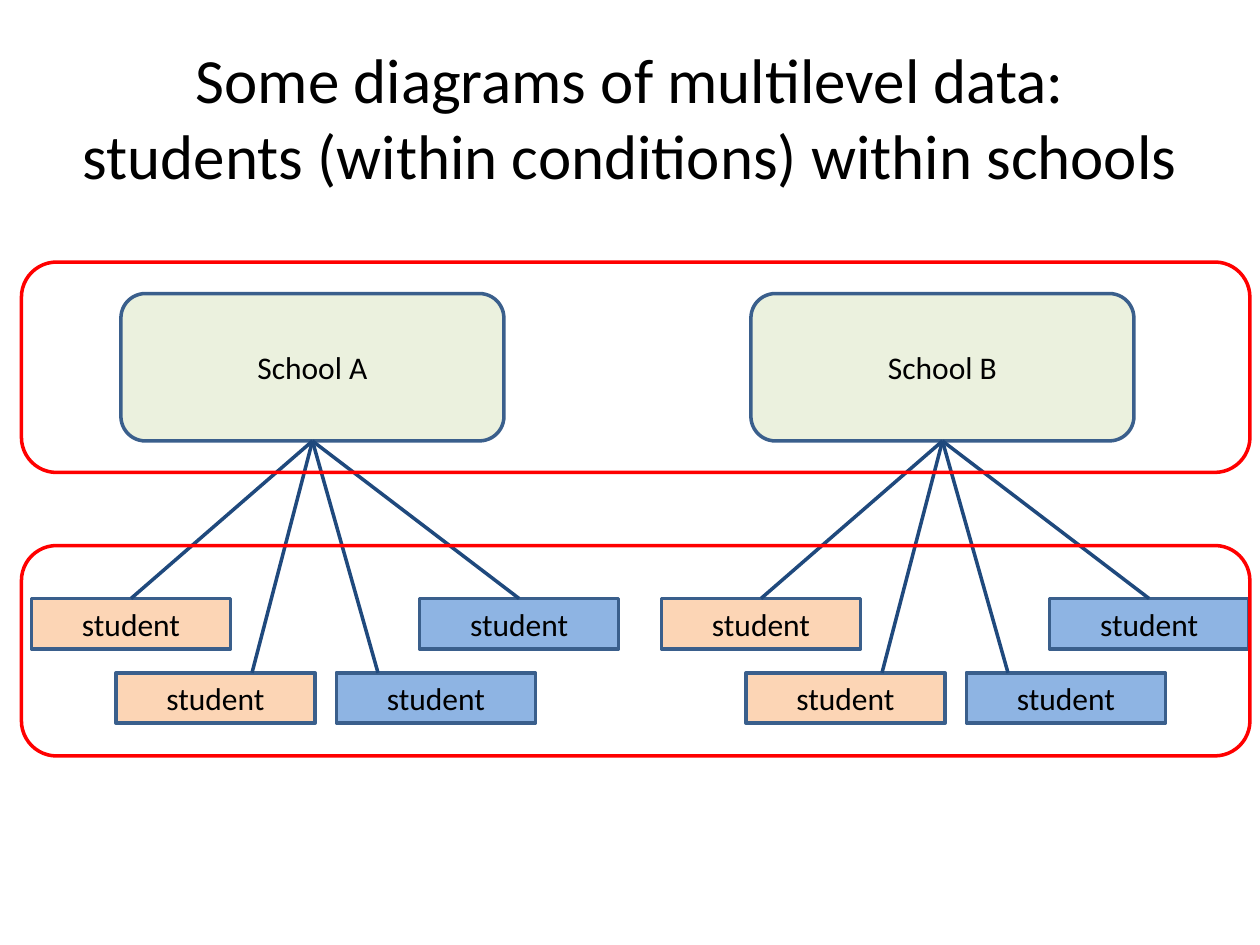
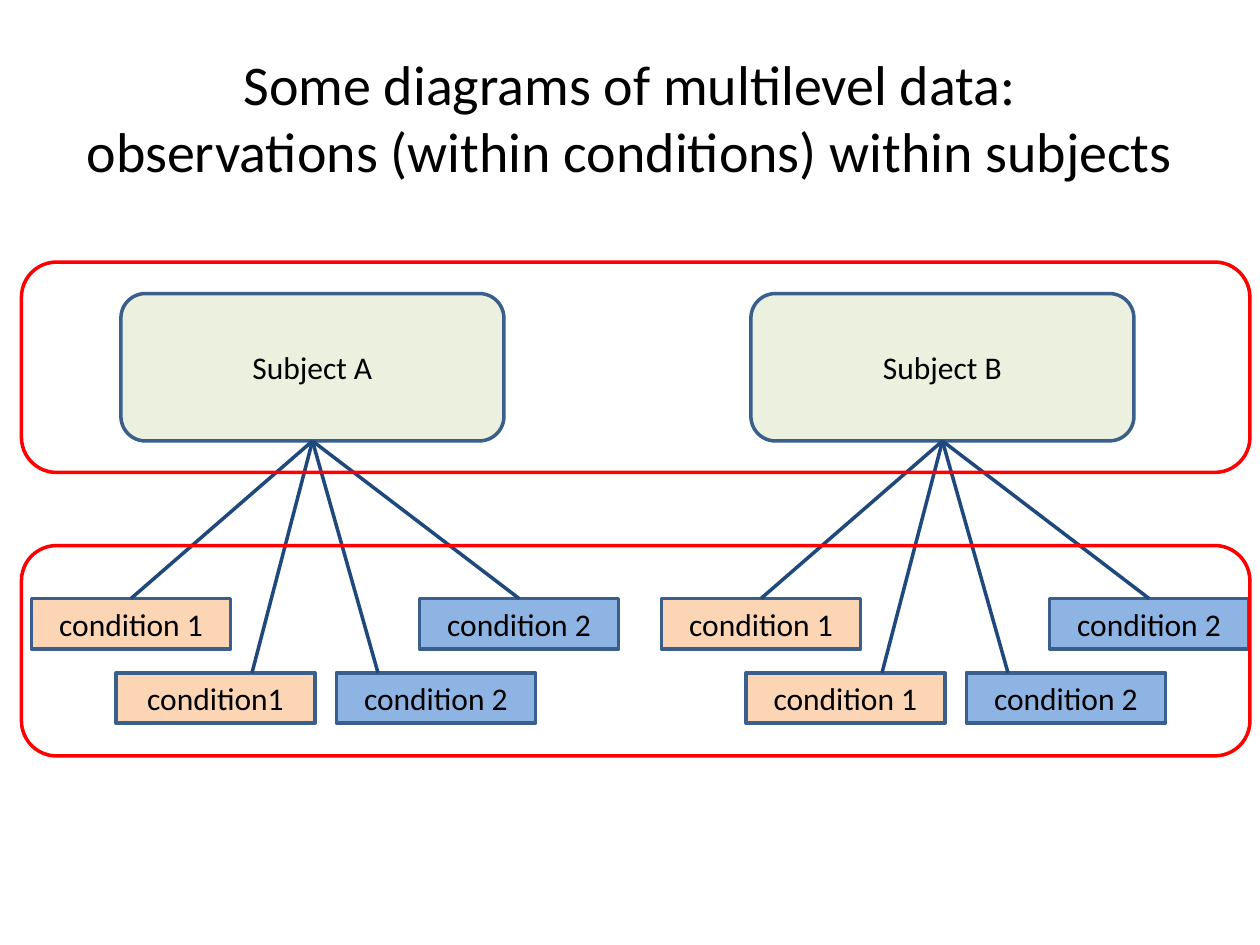
"""Builds two slides that show multilevel data as trees of groups and members."""
from dataclasses import dataclass

from pptx import Presentation
from pptx.dml.color import RGBColor
from pptx.enum.shapes import MSO_CONNECTOR, MSO_SHAPE
from pptx.enum.text import MSO_ANCHOR, PP_ALIGN
from pptx.oxml.ns import qn
from pptx.util import Inches, Pt

RECT, ROUND = MSO_SHAPE.RECTANGLE, MSO_SHAPE.ROUNDED_RECTANGLE
LINE = MSO_CONNECTOR.STRAIGHT
MIDDLE, CENTER = MSO_ANCHOR.MIDDLE, PP_ALIGN.CENTER
TOP, BOTTOM = 0, 2

SLIDES = [
    {
        "title": ("Some diagrams of multilevel data:",
                  "students (within conditions) within schools"),
        "size": 36,
        "trees": [("School A", ["student"] * 4),
                  ("School B", ["student"] * 4)],
    },
    {
        "title": ("Some diagrams of multilevel data:",
                  "observations (within conditions) within subjects"),
        "size": 32,
        "trees": [
            ("Subject A", ["condition 1", "condition1", "condition 2", "condition 2"]),
            ("Subject B", ["condition 1", "condition 1", "condition 2", "condition 2"]),
        ],
    },
]


@dataclass(frozen=True)
class Theme:
    """Holds the colours, font and sizes that all slides share."""
    font: str = "Calibri"
    text: str = "000000"
    group: str = "EBF1DE"
    first: str = "FCD5B5"
    second: str = "8EB4E3"
    edge: str = "3A5F8C"
    link: str = "1F497D"
    frame: str = "FF0000"
    label: int = 18
    line: int = 2


THEME = Theme()
WIDTH, HEIGHT = 10, 7.5
TREE = WIDTH / 2
TITLE = (0.5, 0.3, 9, 1.25)
GROUP = (0.96, 2.33, 3.04, 1.17)
LEAF = (1.58, 0.4)
UPPER, LOWER = 4.75, 5.34
FRAMES = [(0.17, top, 9.75, 1.67) for top in (2.08, 4.33)]
LEAVES = [
    (0.25, UPPER, THEME.first, None),
    (0.92, LOWER, THEME.first, 2),
    (2.67, LOWER, THEME.second, 3),
    (3.33, UPPER, THEME.second, None),
]


def color(code):
    """Turn a hex code into a colour."""
    return RGBColor.from_string(code)


def write(shape, text, size):
    """Put centred text into a shape."""
    frame = shape.text_frame
    frame.word_wrap = True
    frame.vertical_anchor = MIDDLE
    frame.text = text
    para = frame.paragraphs[0]
    para.alignment = CENTER
    para.font.name = THEME.font
    para.font.size = Pt(size)
    para.font.color.rgb = color(THEME.text)


def draw_box(slide, kind, area, edge, fill=None, text=None):
    """Draw an outlined box, with fill and label if given."""
    box = slide.shapes.add_shape(kind, *map(Inches, area))
    box.shadow.inherit = False
    box.line.color.rgb = color(edge)
    box.line.width = Pt(THEME.line)
    if fill:
        box.fill.solid()
        box.fill.fore_color.rgb = color(fill)
    else:
        box.fill.background()
    if text:
        write(box, text, THEME.label)
    return box


def draw_link(slide, group, leaf, end):
    """Link a group to a leaf, at its top middle or at a given x."""
    x = leaf.left if end is None else Inches(end)
    link = slide.shapes.add_connector(LINE, 0, 0, x, leaf.top)
    link.begin_connect(group, BOTTOM)
    if end is None:
        link.end_connect(leaf, TOP)
    link.line.color.rgb = color(THEME.link)
    link.line.width = Pt(THEME.line)
    props = link._element.spPr
    props.append(props.makeelement(qn("a:effectLst"), {}))


def draw_tree(slide, left, name, labels):
    """Draw one group with its members."""
    x, *rest = GROUP
    group = draw_box(slide, ROUND, (left + x, *rest), THEME.edge, THEME.group, name)
    for label, (x, top, fill, end) in zip(labels, LEAVES):
        leaf = draw_box(slide, RECT, (left + x, top, *LEAF), THEME.edge, fill, label)
        draw_link(slide, group, leaf, None if end is None else left + end)


def build_slide(deck, data):
    """Add a slide with its title, trees and level frames."""
    slide = deck.slides.add_slide(deck.slide_layouts[6])
    title = slide.shapes.add_textbox(*map(Inches, TITLE))
    write(title, "\v".join(data["title"]), data["size"])
    for col, (name, labels) in enumerate(data["trees"]):
        draw_tree(slide, col * TREE, name, labels)
    for area in FRAMES:
        draw_box(slide, ROUND, area, THEME.frame)


def main():
    """Build and save the deck."""
    deck = Presentation()
    deck.slide_width, deck.slide_height = Inches(WIDTH), Inches(HEIGHT)
    for data in SLIDES:
        build_slide(deck, data)
    deck.save("out.pptx")


if __name__ == "__main__":
    main()
